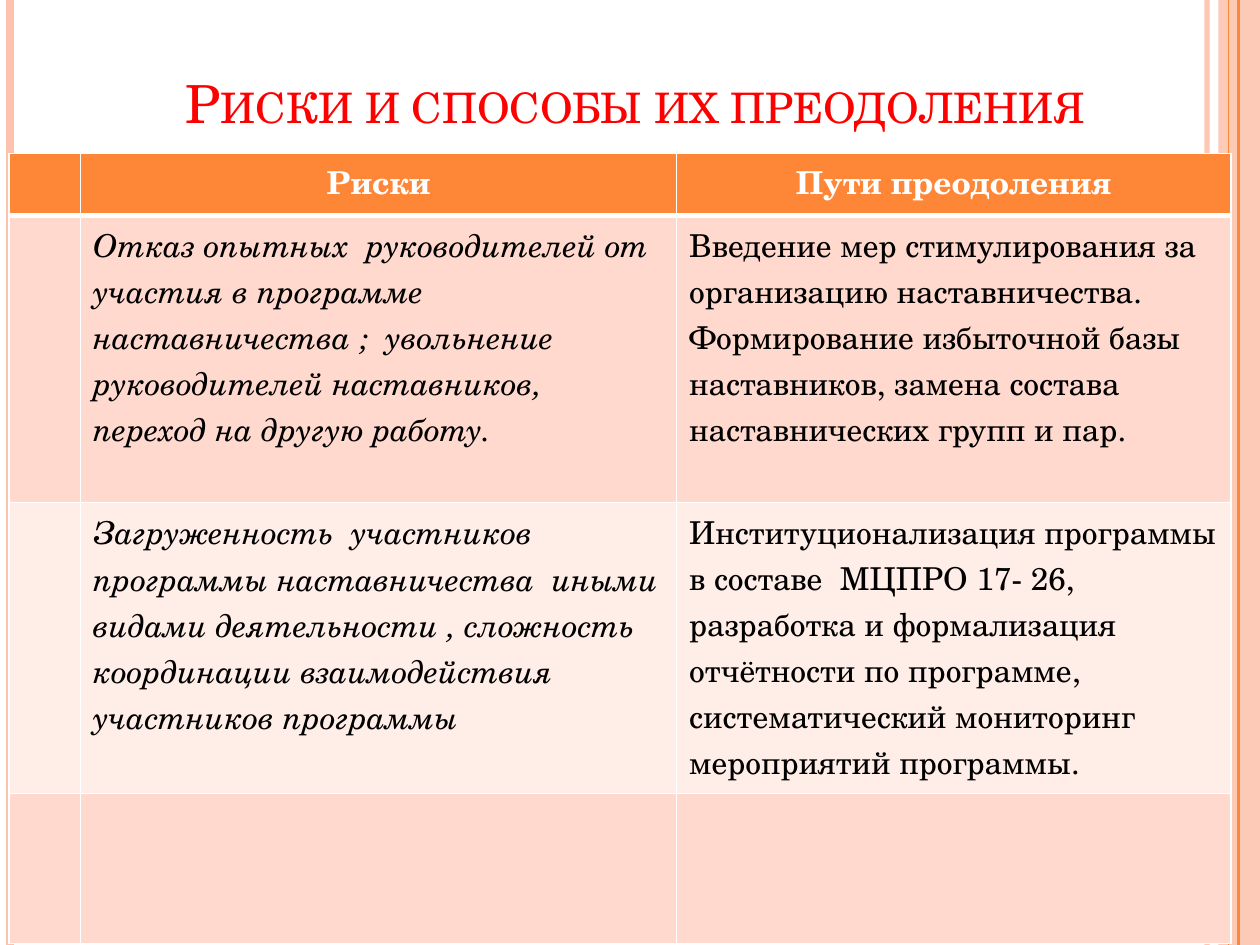
from lxml.etree import SubElement
from pptx import Presentation
from pptx.dml.color import RGBColor
from pptx.enum.shapes import MSO_CONNECTOR, MSO_SHAPE
from pptx.enum.text import MSO_ANCHOR, PP_ALIGN
from pptx.oxml.ns import qn
from pptx.util import Inches, Pt

FONT = "TeX Gyre Schola"
WHITE = RGBColor(0xFF, 0xFF, 0xFF)
BLACK = RGBColor(0, 0, 0)
RED = RGBColor(0xFF, 0, 0)
ORANGE = RGBColor(0xFE, 0x86, 0x37)
PEACH = RGBColor(0xFE, 0xC3, 0xAE)
BAND_DARK = RGBColor(0xFF, 0xD9, 0xCE)
BAND_LIGHT = RGBColor(0xFF, 0xED, 0xE8)

STRIPES = [
    (9.58, PEACH, 3, 93),
    (0.08, PEACH, 4.5, 100),
    (9.83, ORANGE, 1.5, 100),
    (9.75, ORANGE, 0.75, 100),
]
COLUMN_WIDTHS = [0.57, 4.73, 4.4]
ROW_HEIGHTS = [0.49, 2.28, 2.31, 1.19]
RISK_ROWS = [
    ([], ["Риски"], ["Пути преодоления"]),
    (
        [],
        ["Отказ опытных  руководителей от участия в программе наставничества ;  "
         "увольнение руководителей наставников, переход на другую работу."],
        ["Введение мер стимулирования за организацию наставничества.",
         "Формирование избыточной базы наставников, замена состава  наставнических групп и пар."],
    ),
    (
        [],
        ["Загруженность  участников программы наставничества  иными видами деятельности , "
         "сложность координации взаимодействия  участников программы"],
        ["Институционализация программы в составе  МЦПРО 17- 26, разработка и формализация "
         "отчётности по программе,  систематический мониторинг мероприятий программы."],
    ),
    ([], [], []),
]


def set_opacity(fill, percent):
    color = fill.find(f".//{qn('a:srgbClr')}")
    SubElement(color, qn("a:alpha"), val=str(percent * 1000))


def set_font(paragraph, size, color, bold=False, italic=False):
    font = paragraph.font
    font.name = FONT
    font.size = Pt(size)
    font.color.rgb = color
    font.bold = bold
    font.italic = italic


def add_stripe(slide, x, top, height, color, weight, opacity):
    stripe = slide.shapes.add_connector(
        MSO_CONNECTOR.STRAIGHT, Inches(x), Inches(top), Inches(x), Inches(top + height))
    stripe.line.color.rgb = color
    stripe.line.width = Pt(weight)
    properties = stripe._element.spPr
    if opacity < 100:
        set_opacity(properties, opacity)
    SubElement(properties, qn("a:effectLst"))


def add_frame(slide, top, height):
    side_band = slide.shapes.add_shape(
        MSO_SHAPE.RECTANGLE, Inches(9.67), Inches(top), Inches(0.33), Inches(height))
    side_band.shadow.inherit = False
    side_band.fill.solid()
    side_band.fill.fore_color.rgb = PEACH
    set_opacity(side_band._element.spPr, 87)
    side_band.line.fill.background()
    for x, color, weight, opacity in STRIPES:
        add_stripe(slide, x, top, height, color, weight, opacity)


def add_title(slide, left, top, width, height):
    title = slide.shapes.add_textbox(Inches(left), Inches(top), Inches(width), Inches(height))
    frame = title.text_frame
    frame.word_wrap = True
    frame.vertical_anchor = MSO_ANCHOR.BOTTOM
    heading = frame.paragraphs[0]
    heading.alignment = PP_ALIGN.CENTER
    set_font(heading, 30, RED)
    run = heading.add_run()
    run.text = "Риски и способы их преодоления"
    run._r.get_or_add_rPr().set("cap", "small")


def set_borders(cell, bottom_weight):
    properties = cell._tc.get_or_add_tcPr()
    weights = [("a:lnL", 1), ("a:lnR", 1), ("a:lnT", 1), ("a:lnB", bottom_weight)]
    for position, (side, weight) in enumerate(weights):
        border = SubElement(properties, qn(side), w=str(Pt(weight)))
        fill = SubElement(border, qn("a:solidFill"))
        SubElement(fill, qn("a:srgbClr"), val=str(WHITE))
        properties.insert(position, border)


def fill_cell(cell, texts, row, column):
    header = row == 0
    cell.fill.solid()
    cell.fill.fore_color.rgb = ORANGE if header else (BAND_DARK if row % 2 else BAND_LIGHT)
    set_borders(cell, 3 if header else 1)
    frame = cell.text_frame
    for index, text in enumerate(texts or [""]):
        paragraph = frame.paragraphs[0] if index == 0 else frame.add_paragraph()
        paragraph.alignment = PP_ALIGN.CENTER if header else PP_ALIGN.LEFT
        paragraph.line_spacing = Pt(26.3)
        set_font(paragraph, 18, WHITE if header else BLACK,
                 bold=header, italic=not header and column == 1)
        if text:
            paragraph.add_run().text = text


def add_risk_table(slide, left, top):
    table = slide.shapes.add_table(
        len(ROW_HEIGHTS), len(COLUMN_WIDTHS), Inches(left), Inches(top),
        Inches(sum(COLUMN_WIDTHS)), Inches(sum(ROW_HEIGHTS))).table
    for column, width in zip(table.columns, COLUMN_WIDTHS):
        column.width = Inches(width)
    for row, height in zip(table.rows, ROW_HEIGHTS):
        row.height = Inches(height)
    for row, cells in enumerate(RISK_ROWS):
        for column, texts in enumerate(cells):
            fill_cell(table.cell(row, column), texts, row, column)


def main():
    presentation = Presentation()
    presentation.slide_width = Inches(10)
    presentation.slide_height = Inches(7.5)
    slide = presentation.slides.add_slide(presentation.slide_layouts[6])
    add_frame(slide, 0, 7.5)
    add_title(slide, 0.5, 0.3, 9.08, 0.81)
    add_risk_table(slide, 0.07, 1.22)
    presentation.save("out.pptx")


if __name__ == "__main__":
    main()
